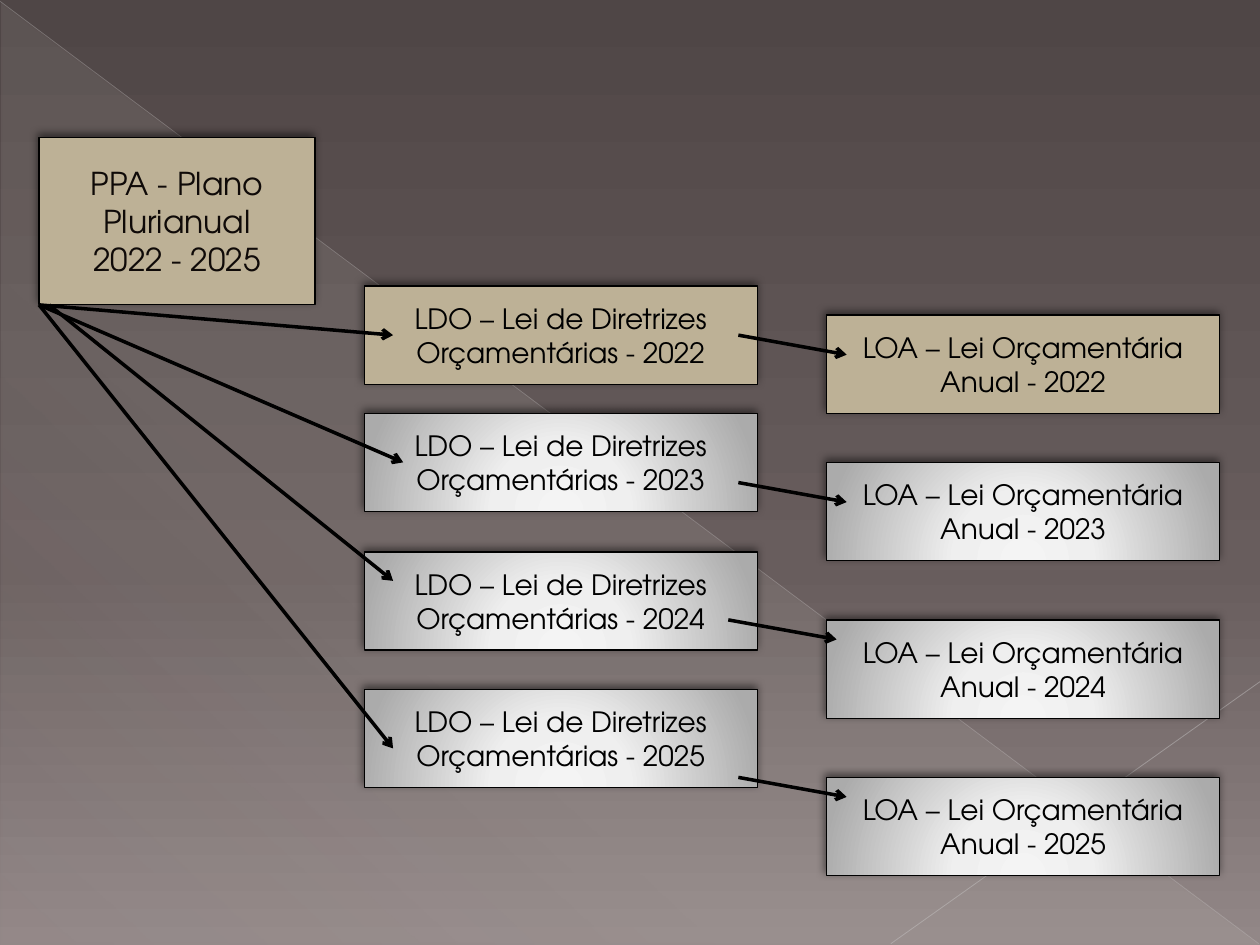
from lxml import etree
from pptx import Presentation
from pptx.dml.color import RGBColor
from pptx.enum import shapes, text
from pptx.oxml import parse_xml
from pptx.oxml.ns import nsdecls, qn
from pptx.util import Inches, Pt

FONT = "TeX Gyre Adventor"
TAN = "BDB196"
BLACK = "000000"
SILVER_STOPS = [(0, "F4F4F4", 100), (34, "EFEFEF", 100), (100, "ABABAB", 100)]
SILVER_PATH = '<a:path path="circle"><a:fillToRect l="50000" t="155000" r="50000" b="-55000"/></a:path>'


def color(value):
    return RGBColor.from_string(value)


def linear(angle):
    return f'<a:lin ang="{angle * 60000}" scaled="0"/>'


def set_gradient(fill, parent, stops, direction):
    fill.solid()
    stop_xml = "".join(
        f'<a:gs pos="{position * 1000}"><a:srgbClr val="{value}">'
        f'<a:alpha val="{alpha * 1000}"/></a:srgbClr></a:gs>'
        for position, value, alpha in stops
    )
    gradient = parse_xml(
        f'<a:gradFill {nsdecls("a")} rotWithShape="1"><a:gsLst>{stop_xml}</a:gsLst>{direction}</a:gradFill>'
    )
    solid = parent.find(qn("a:solidFill"))
    parent.replace(solid, gradient)


def add_line(slide, start, end, value, width, alpha=100, arrow=False):
    points = [Inches(length) for length in (*start, *end)]
    connector = slide.shapes.add_connector(shapes.MSO_CONNECTOR.STRAIGHT, *points)
    connector.line.color.rgb = color(value)
    connector.line.width = Pt(width)
    properties = connector.element.spPr
    line = properties.find(qn("a:ln"))
    if alpha < 100:
        srgb = line.find(".//" + qn("a:srgbClr"))
        etree.SubElement(srgb, qn("a:alpha"), val=str(alpha * 1000))
    if arrow:
        etree.SubElement(line, qn("a:tailEnd"), type="arrow")
    etree.SubElement(properties, qn("a:effectLst"))


def add_backdrop(slide, left, top, width, height):
    fill = slide.background.fill
    fill.solid()
    background = slide.element.xpath("./p:cSld/p:bg/p:bgPr")[0]
    stops = [(0, "4F4646", 100), (60, "685D5D", 100), (100, "928787", 100)]
    set_gradient(fill, background, stops, linear(90))

    triangle = slide.shapes.add_shape(
        shapes.MSO_SHAPE.RIGHT_TRIANGLE,
        Inches(left + 0.01), Inches(top + 0.02), Inches(width - 0.01), Inches(height - 0.02),
    )
    triangle.shadow.inherit = False
    triangle.line.fill.background()
    stops = [(0, "E9E5DC", 10), (70, "E9E5DC", 8), (100, "E9E5DC", 1)]
    set_gradient(triangle.fill, triangle.element.spPr, stops, linear(133))

    right, bottom = left + width, top + height - 0.01
    add_line(slide, (left, top + 0.01), (right - 0.01, bottom), "C1BEBE", 0.39, alpha=35)
    add_line(slide, (right, 5.41), (7.07, bottom), "C7C5C5", 0.47, alpha=45)


def add_box(slide, left, top, width, height, lines, size, highlighted, text_color=BLACK):
    box = slide.shapes.add_shape(
        shapes.MSO_SHAPE.RECTANGLE, Inches(left), Inches(top), Inches(width), Inches(height)
    )
    if highlighted:
        box.fill.solid()
        box.fill.fore_color.rgb = color(TAN)
    else:
        set_gradient(box.fill, box.element.spPr, SILVER_STOPS, SILVER_PATH)
    box.line.color.rgb = color(BLACK)
    box.line.width = Pt(0.75)
    box.shadow.inherit = False
    effects = box.element.spPr.find(qn("a:effectLst"))
    effects.append(parse_xml(
        f'<a:outerShdw {nsdecls("a")} blurRad="{Pt(5)}" dist="{Pt(2)}" dir="{245 * 60000}" rotWithShape="0">'
        f'<a:srgbClr val="{BLACK}"><a:alpha val="50000"/></a:srgbClr></a:outerShdw>'
    ))
    frame = box.text_frame
    frame.word_wrap = True
    frame.vertical_anchor = text.MSO_ANCHOR.MIDDLE
    for index, line in enumerate(lines):
        paragraph = frame.paragraphs[0] if index == 0 else frame.add_paragraph()
        paragraph.text = line
        paragraph.alignment = text.PP_ALIGN.CENTER
        paragraph.font.name = FONT
        paragraph.font.size = Pt(size)
        paragraph.font.color.rgb = color(text_color)


def add_year_column(slide, left, tops, label):
    for index, top in enumerate(tops):
        add_box(slide, left, top, 3.12, 0.78, [f"{label} - {2022 + index}"], 16, index == 0)


def add_arrows(slide):
    plan_arrows = [
        ((0.31, 2.42), (3.12, 2.66)),
        ((0.31, 2.42), (3.2, 3.67)),
        ((0.39, 2.42), (3.12, 4.61)),
        ((0.31, 2.42), (3.12, 5.94)),
    ]
    budget_starts = [(5.86, 2.66), (5.86, 3.83), (5.78, 4.92), (5.86, 6.17)]
    budget_arrows = [((x, y), (x + 0.86, y + 0.155)) for x, y in budget_starts]
    for start, end in plan_arrows + budget_arrows:
        add_line(slide, start, end, BLACK, 2, arrow=True)


def main():
    presentation = Presentation()
    presentation.slide_width = Inches(10)
    presentation.slide_height = Inches(7.5)
    slide = presentation.slides.add_slide(presentation.slide_layouts[6])
    add_backdrop(slide, 0, 0, 10, 7.5)
    add_box(slide, 0.31, 1.09, 2.19, 1.33, ["PPA - Plano Plurianual", "2022 - 2025"], 18, True, "0F0A08")
    add_year_column(slide, 2.89, [2.27, 3.28, 4.38, 5.47], "LDO – Lei de Diretrizes Orçamentárias")
    add_year_column(slide, 6.56, [2.5, 3.67, 4.92, 6.17], "LOA – Lei Orçamentária Anual")
    add_arrows(slide)
    presentation.save("out.pptx")


if __name__ == "__main__":
    main()
